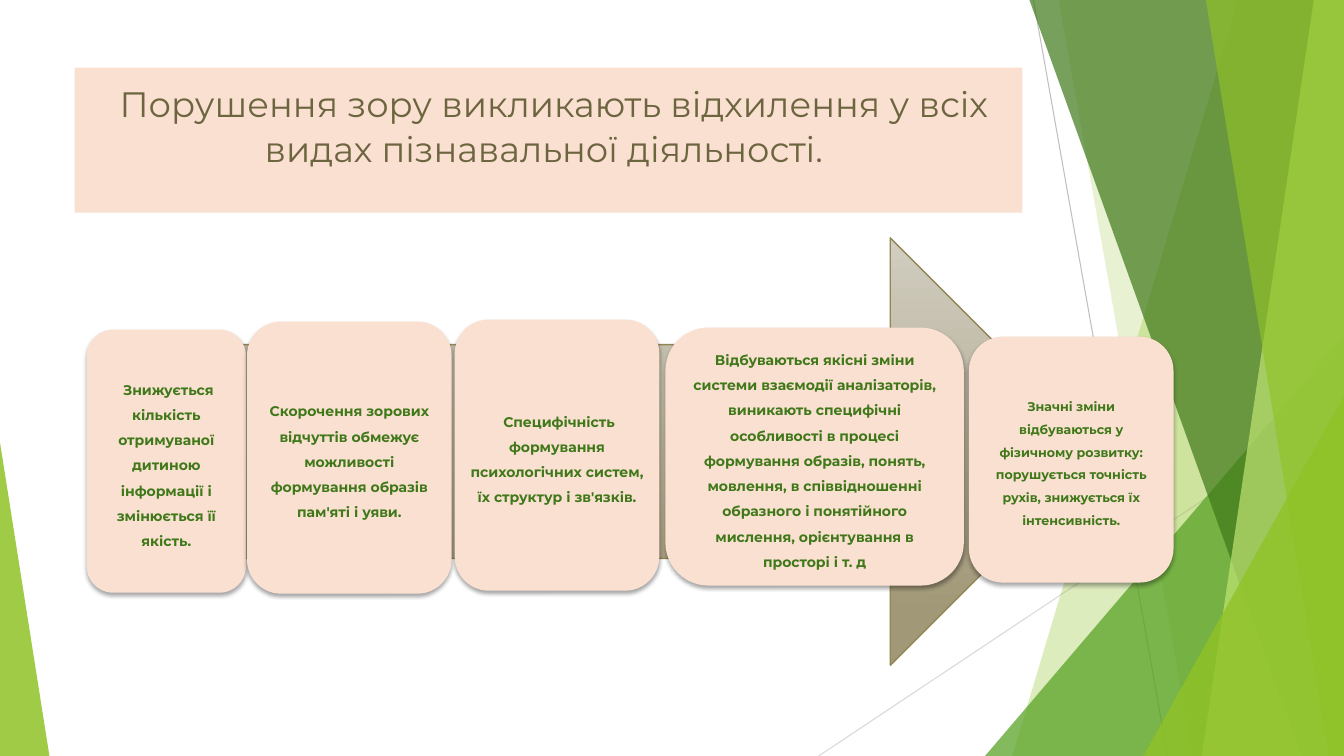
from lxml import etree
from pptx import Presentation
from pptx.dml.color import RGBColor
from pptx.enum.shapes import MSO_CONNECTOR, MSO_SHAPE
from pptx.enum.text import MSO_ANCHOR, PP_ALIGN
from pptx.oxml.ns import qn
from pptx.util import Pt

PX = 9144
W, H = 1333, 750
TITLE_ONLY = 5
LINE = MSO_CONNECTOR.STRAIGHT
TRIANGLE = MSO_SHAPE.ISOSCELES_TRIANGLE
ROUND_RECT = MSO_SHAPE.ROUNDED_RECTANGLE
RIGHT_ARROW = MSO_SHAPE.RIGHT_ARROW
CENTER = PP_ALIGN.CENTER
TOP, MIDDLE = MSO_ANCHOR.TOP, MSO_ANCHOR.MIDDLE
FONT = "Montserrat"
PEACH, GREEN, LIME = "FAE0D1", "3F7819", "90C226"

RAYS = [((1025, 0), (1158, 750), "BFBFBF"), ((1333, 403), (812, 750), "D9D9D9")]
FACETS = [
    ("band", 1228, 1004, LIME, 30),
    ("band", 1050, 1183, LIME, 20),
    ("corner", 977, 333, "54A021", 72),
    ("band", 1021, 1291, GREEN, 70),
    ("band", 1303, 1192, "C0E474", 70),
    ("band", 1196, 1318, LIME, 65),
    ("corner", 1134, 393, LIME, 80),
]
CARDS = [
    ((0, 91, 158, 261), 10, " Знижується кількість отримуваної дитиною інформації і змінюється її якість."),
    ((159, 83, 203, 270), 10, "Скорочення зорових відчуттів обмежує можливості формування образів пам'яті і уяви."),
    ((365, 81, 203, 269), 10, " Специфічність формування психологічних систем, їх структур і зв'язків."),
    ((574, 89, 296, 256), 10, "Відбуваються якісні зміни системи взаємодії аналізаторів, виникають специфічні "
     "особливості в процесі формування образів, понять, мовлення, в співвідношенні образного "
     "і понятійного мислення, орієнтування в просторі і т. д"),
    ((875, 98, 203, 244), 9, "Значні зміни відбуваються у фізичному розвитку: порушується точність рухів, "
     "знижується їх інтенсивність."),
]


def rgb(color):
    return RGBColor.from_string(color)


def emu(*lengths):
    return [n * PX for n in lengths]


def paint(sp, color, opacity=100):
    sp.shadow.inherit = False
    sp.fill.solid()
    sp.fill.fore_color.rgb = rgb(color)
    sp.line.fill.background()
    if opacity < 100:
        clr = sp.fill._xPr.find(qn("a:solidFill"))[0]
        etree.SubElement(clr, qn("a:alpha"), val=str(opacity * 1000))


def soft_shadow(sp):
    effects = sp._element.spPr.find(qn("a:effectLst"))
    shadow = etree.SubElement(effects, qn("a:outerShdw"), blurRad=str(Pt(3)),
                              dist=str(Pt(2)), dir="5400000", rotWithShape="0")
    clr = etree.SubElement(shadow, qn("a:srgbClr"), val="000000")
    etree.SubElement(clr, qn("a:alpha"), val="35000")


def add_triangle(s, box, apex, color, opacity):
    sp = s.shapes.add_shape(TRIANGLE, *emu(*box))
    sp.adjustments[0] = apex
    paint(sp, color, opacity)


def add_backdrop(s, box):
    x, y, w, h = box
    right, bottom = x + w, y + h
    for (x1, y1), (x2, y2), color in RAYS:
        ln = s.shapes.add_connector(LINE, *emu(x + x1, y + y1, x + x2, y + y2))
        ln.line.color.rgb = rgb(color)
        ln.line.width = Pt(0.75)
        etree.SubElement(ln._element.spPr, qn("a:effectLst"))
    for kind, a, b, color, opacity in FACETS:
        if kind == "corner":
            add_triangle(s, (x + a, y + b, w - a, h - b), 1, color, opacity)
        else:
            fb = s.shapes.build_freeform(x + a, y, PX)
            fb.add_line_segments([(right, y), (right, bottom), (x + b, bottom)])
            paint(fb.convert_to_shape(), color, opacity)
    add_triangle(s, (x, y + 439, 49, h - 439), 0, LIME, 85)


def add_title(s, box):
    sp = s.shapes.title
    sp.left, sp.top, sp.width, sp.height = emu(*box)
    sp.fill.solid()
    sp.fill.fore_color.rgb = rgb(PEACH)
    tf = sp.text_frame
    tf.word_wrap = True
    tf.vertical_anchor = TOP
    p = tf.paragraphs[0]
    p.alignment = CENTER
    for text, font, size, color in [
        (" ", "Karla", 32.4, LIME),
        ("Порушення зору викликають відхилення у всіх видах пізнавальної діяльності. ",
         FONT, 25.2, "6D6540"),
    ]:
        r = p.add_run()
        r.text = text
        r.font.name, r.font.size = font, Pt(size)
        r.font.color.rgb = rgb(color)


def add_card(s, box, size, text):
    sp = s.shapes.add_shape(ROUND_RECT, *emu(*box))
    paint(sp, PEACH)
    soft_shadow(sp)
    tf = sp.text_frame
    tf.word_wrap = True
    tf.vertical_anchor = MIDDLE
    tf.margin_left, tf.margin_top, tf.margin_right, tf.margin_bottom = emu(4, 4, 4, 4)
    p = tf.paragraphs[0]
    p.text = text
    p.alignment = CENTER
    p.line_spacing = 1.5
    p.space_after = Pt(3.5)
    p.font.name, p.font.size, p.font.bold = FONT, Pt(size), True
    p.font.color.rgb = rgb(GREEN)


def add_process(s, box):
    x, y, w, h = box
    arrow = s.shapes.add_shape(RIGHT_ARROW, *emu(x + 71, y, w - 140, h))
    arrow.shadow.inherit = False
    arrow.fill.gradient()
    arrow.fill.gradient_angle = 270
    for stop, position, color in zip(arrow.fill.gradient_stops, (0, 0.88), ("D1CDC0", "A19877")):
        stop.position = position
        stop.color.rgb = rgb(color)
    arrow.line.color.rgb = rgb("918655")
    arrow.line.width = Pt(1)
    for (dx, dy, cw, ch), size, text in CARDS:
        add_card(s, (x + dx, y + dy, cw, ch), size, text)


def main():
    prs = Presentation()
    prs.slide_width, prs.slide_height = emu(W, H)
    s = prs.slides.add_slide(prs.slide_layouts[TITLE_ONLY])
    add_backdrop(s, (0, 0, W, H))
    add_title(s, (74, 67, 940, 144))
    add_process(s, (86, 236, 1078, 424))
    prs.save("out.pptx")


if __name__ == "__main__":
    main()
